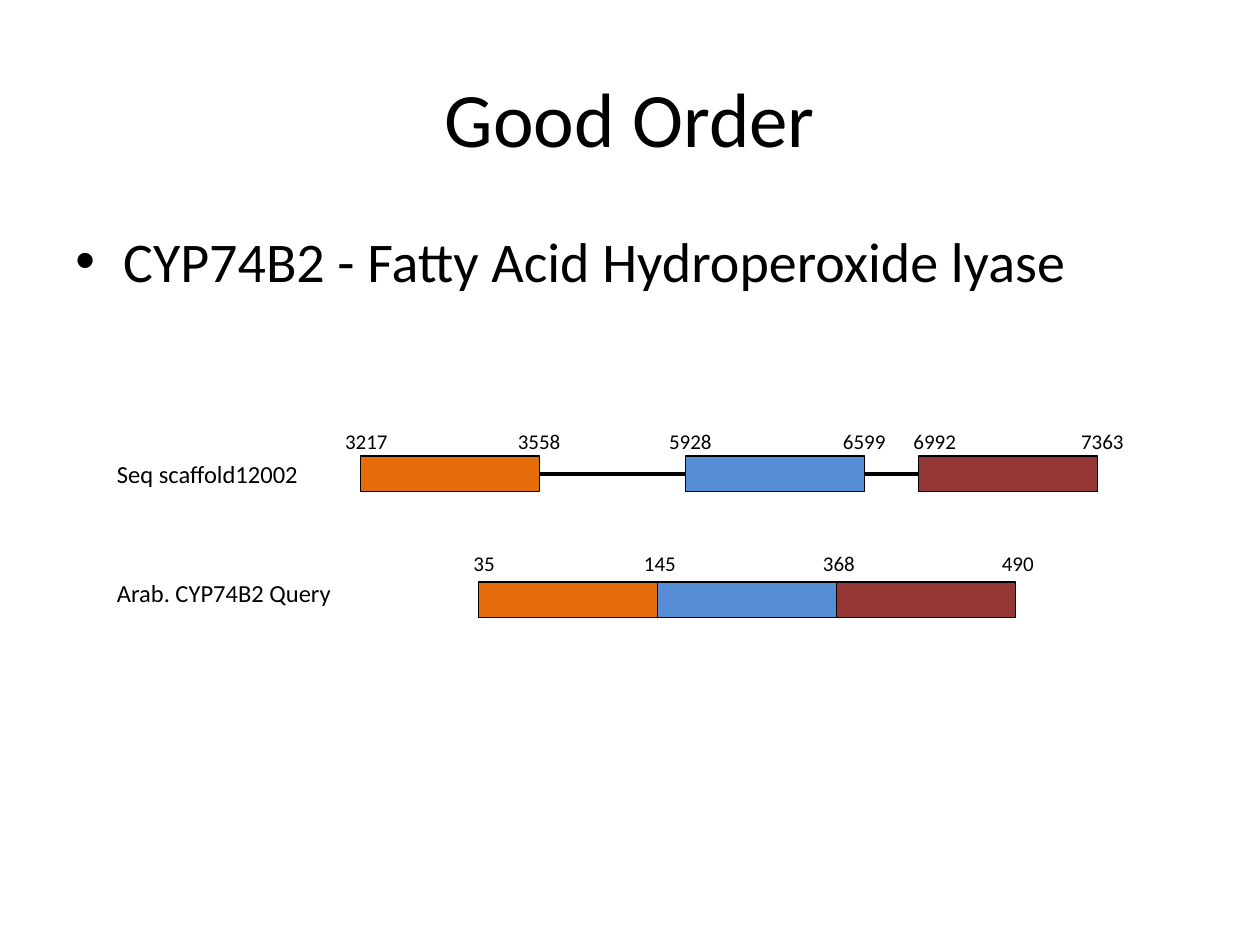
"""Build the Good Order slide comparing scaffold exons with the query protein."""
from lxml.etree import SubElement
from pptx import Presentation
from pptx.dml.color import RGBColor
from pptx.enum.shapes import MSO_CONNECTOR as CONNECTOR, MSO_SHAPE as SHAPE
from pptx.enum.text import MSO_ANCHOR as ANCHOR, PP_ALIGN as ALIGN
from pptx.oxml.ns import qn
from pptx.util import Inches, Pt

BLACK = RGBColor(0x00, 0x00, 0x00)
ORANGE = RGBColor(0xE4, 0x6C, 0x0A)
BLUE = RGBColor(0x55, 0x8E, 0xD5)
RED = RGBColor(0x95, 0x37, 0x35)
EXON_COLORS = (ORANGE, BLUE, RED)
EXON_WIDTH, EXON_HEIGHT = 1.42, 0.28
INSET = 0.1

TITLE = "Good Order"
TOPIC = "CYP74B2 - Fatty Acid Hydroperoxide lyase"
TRACKS = [
    {
        "name": "Seq scaffold12002",
        "name_box": (0.83, 3.59, 1.8, 0.34),
        "exon_lefts": (2.86, 5.44, 7.29),
        "exon_top": 3.62,
        "introns": True,
        "positions": ("3217", "3558", "5928", "6599", "6992", "7363"),
        "positions_box": (2.64, 3.35, 6.42, 0.3),
        "position_centers": (4.28, 5.48, 6.86, 7.42, 8.75),
    },
    {
        "name": "Arab. CYP74B2 Query",
        "name_box": (0.83, 4.54, 2.04, 0.34),
        "exon_lefts": tuple(3.8 + i * EXON_WIDTH for i in range(3)),
        "exon_top": 4.62,
        "introns": False,
        "positions": ("35", "145", "368", "490"),
        "positions_box": (3.66, 4.32, 5.96, 0.3),
        "position_centers": (5.24, 6.66, 8.08),
    },
]


def add_run(paragraph, text, size):
    run = paragraph.add_run()
    run.text = text
    run.font.name = "Calibri"
    run.font.size = Pt(size)
    run.font.color.rgb = BLACK


def add_text(slide, box, text, size):
    frame = slide.shapes.add_textbox(*map(Inches, box)).text_frame
    frame.word_wrap = True
    paragraph = frame.paragraphs[0]
    add_run(paragraph, text, size)
    return paragraph


def add_topic(slide):
    paragraph = add_text(slide, (0.5, 1.75, 9, 2.8), TOPIC, 32)
    paragraph.space_before = Pt(6.4)
    properties = paragraph._p.get_or_add_pPr()
    properties.set("marL", str(Inches(0.38)))
    properties.set("indent", str(-Inches(0.38)))
    SubElement(properties, qn("a:buFont"), typeface="Arial")
    SubElement(properties, qn("a:buChar"), char="•")


def add_positions(slide, track):
    box = track["positions_box"]
    paragraph = add_text(slide, box, "\t".join(track["positions"]), 12)
    tabs = SubElement(paragraph._p.get_or_add_pPr(), qn("a:tabLst"))
    for center in track["position_centers"]:
        offset = Inches(center - box[0] - INSET)
        SubElement(tabs, qn("a:tab"), pos=str(offset), algn="ctr")


def add_intron(slide, start, end, y):
    intron = slide.shapes.add_connector(
        CONNECTOR.STRAIGHT, Inches(start), Inches(y), Inches(end), Inches(y))
    intron.line.color.rgb = BLACK
    intron.line.width = Pt(2)
    SubElement(intron._element.spPr, qn("a:effectLst"))


def add_exon(slide, left, top, color):
    exon = slide.shapes.add_shape(
        SHAPE.RECTANGLE, *map(Inches, (left, top, EXON_WIDTH, EXON_HEIGHT)))
    exon.shadow.inherit = False
    exon.fill.solid()
    exon.fill.fore_color.rgb = color
    exon.line.color.rgb = BLACK
    exon.line.width = Pt(0.75)


def add_track(slide, track):
    lefts, top = track["exon_lefts"], track["exon_top"]
    if track["introns"]:
        for left, following in zip(lefts, lefts[1:]):
            add_intron(slide, left + EXON_WIDTH, following, top + EXON_HEIGHT / 2)
    for left, color in zip(lefts, EXON_COLORS):
        add_exon(slide, left, top, color)
    add_positions(slide, track)
    add_text(slide, track["name_box"], track["name"], 14)


def main():
    deck = Presentation()
    deck.slide_width, deck.slide_height = Inches(10), Inches(7.5)
    slide = deck.slides.add_slide(deck.slide_layouts[5])
    title = slide.shapes.title
    title.left, title.top, title.width, title.height = map(Inches, (0.5, 0.3, 9, 1.25))
    title.text_frame.vertical_anchor = ANCHOR.MIDDLE
    heading = title.text_frame.paragraphs[0]
    heading.alignment = ALIGN.CENTER
    add_run(heading, TITLE, 44)
    add_topic(slide)
    for track in TRACKS:
        add_track(slide, track)
    deck.save("out.pptx")


if __name__ == "__main__":
    main()
